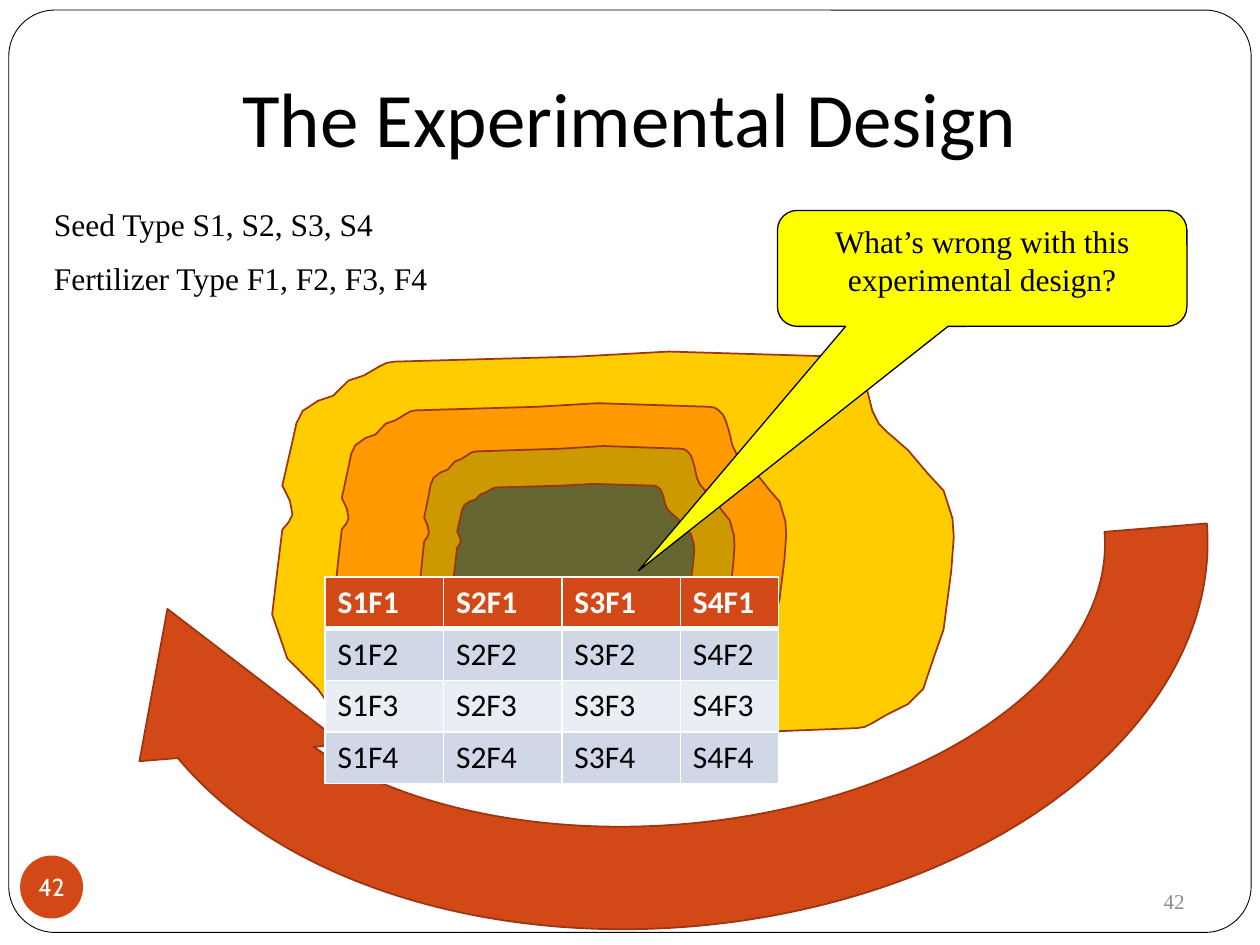
from pptx import Presentation, util as u
from pptx.dml.color import RGBColor
from pptx.enum import shapes, text
from pptx.oxml import parse_xml
from pptx.oxml.ns import nsdecls

BLACK = RGBColor(0x00, 0x00, 0x00)
WHITE = RGBColor(0xFF, 0xFF, 0xFF)
GRAY = RGBColor(0x8C, 0x8C, 0x8C)
RUST = RGBColor(0xD3, 0x48, 0x17)
DARK_RUST = RGBColor(0x9C, 0x35, 0x11)
YELLOW = RGBColor(0xFF, 0xFF, 0x00)
GOLD = RGBColor(0xFF, 0xCC, 0x00)
ORANGE = RGBColor(0xFF, 0x99, 0x00)
OCHRE = RGBColor(0xCC, 0x99, 0x00)
OLIVE = RGBColor(0x66, 0x66, 0x33)
BAND_DARK = RGBColor(0xD0, 0xD8, 0xE8)
BAND_LIGHT = RGBColor(0xE9, 0xED, 0xF4)

COLUMNS, ROWS = 10, 7.5
SERIF, SANS = "Times New Roman", "Calibri"
SHAPE = shapes.MSO_SHAPE
ALIGN = text.PP_ALIGN
MIDDLE = text.MSO_ANCHOR.MIDDLE

FIELD_OUTLINE = [
    (3.88, 6.2), (3.36, 6.17), (3.24, 6.13), (3.04, 5.97), (2.92, 5.89),
    (2.68, 5.69), (2.52, 5.46), (2.28, 5.22), (2.16, 4.87), (2.2, 4.53),
    (2.24, 4.2), (2.29, 4.14), (2.32, 4.08), (2.3, 3.97), (2.24, 3.85),
    (2.32, 3.5), (2.35, 3.36), (2.4, 3.26), (2.52, 3.18), (2.64, 3.14),
    (2.76, 3.02), (2.88, 2.98), (3, 2.91), (3.06, 2.88), (3.12, 2.87),
    (3.84, 2.85), (4.56, 2.83), (5.28, 2.79), (6.6, 2.83), (6.67, 2.84),
    (6.72, 2.87), (6.77, 2.92), (6.8, 2.98), (6.84, 3.1), (6.88, 3.26),
    (6.93, 3.36), (7, 3.43), (7.16, 3.57), (7.32, 3.76), (7.44, 3.89),
    (7.51, 4.11), (7.52, 4.26), (7.5, 4.53), (7.44, 4.99), (7.36, 5.22),
    (7.28, 5.46), (7.16, 5.58), (7, 5.66), (6.88, 5.73), (6.82, 5.76),
    (6.76, 5.77), (6, 5.8), (5.24, 5.81), (5.08, 5.85), (5.02, 5.91),
    (4.96, 5.97), (4.68, 6.01), (4.45, 6.12), (4.32, 6.17),
]


def across(columns):
    return u.Inches(columns)


def place(left, top, width, height):
    return [across(length) for length in (left, top, width, height)]


def paint(item, fill, line=None, weight=1):
    item.shadow.inherit = False
    item.fill.solid()
    item.fill.fore_color.rgb = fill
    if line is None:
        item.line.fill.background()
    else:
        item.line.color.rgb = line
        item.line.width = u.Pt(weight)


def style(paragraph, size, font, color, align=ALIGN.LEFT, bold=False):
    paragraph.alignment = align
    paragraph.font.size = u.Pt(size)
    paragraph.font.name = font
    paragraph.font.color.rgb = color
    paragraph.font.bold = bold


def add_figure(slide, kind, box, fill, line=None, weight=1, adjustments=()):
    figure = slide.shapes.add_shape(kind, *place(*box))
    paint(figure, fill, line, weight)
    for index, value in enumerate(adjustments):
        figure.adjustments[index] = value
    return figure


def add_contour(slide, box, fill):
    left, top, width, height = box
    xs, ys = zip(*FIELD_OUTLINE)
    x_scale = width / (max(xs) - min(xs))
    y_scale = height / (max(ys) - min(ys))
    points = [(across(left + (x - min(xs)) * x_scale),
               across(top + (y - min(ys)) * y_scale)) for x, y in FIELD_OUTLINE]
    builder = slide.shapes.build_freeform(*points[0])
    builder.add_line_segments(points[1:], close=True)
    paint(builder.convert_to_shape(), fill, DARK_RUST)


def add_lines(slide, box, lines, size, color, align=ALIGN.LEFT, space=0):
    frame = slide.shapes.add_textbox(*place(*box)).text_frame
    frame.word_wrap = True
    frame.text = "\n".join(lines)
    for paragraph in frame.paragraphs:
        style(paragraph, size, SERIF, color, align)
        paragraph.space_before = u.Pt(space)
    return frame


def add_borders(cell, **weights):
    properties = cell._tc.get_or_add_tcPr()
    for index, side in enumerate(("L", "R", "T", "B")):
        width = u.Pt(weights.get(side, 1))
        properties.insert(index, parse_xml(
            f'<a:ln{side} {nsdecls("a")} w="{width}"><a:solidFill>'
            f'<a:srgbClr val="{WHITE}"/></a:solidFill></a:ln{side}>'))


def add_plots(slide, left, top, widths, row_height, count):
    box = place(left, top, sum(widths), row_height * count)
    plots = slide.shapes.add_table(count, len(widths), *box).table
    for column, width in zip(plots.columns, widths):
        column.width = across(width)
    for fertilizer in range(count):
        plots.rows[fertilizer].height = across(row_height)
        header = fertilizer == 0
        fill = RUST if header else (BAND_LIGHT, BAND_DARK)[fertilizer % 2]
        weights = {0: {"B": 3}, 1: {"T": 3}}.get(fertilizer, {})
        for seed in range(len(widths)):
            cell = plots.cell(fertilizer, seed)
            cell.text = f"S{seed + 1}F{fertilizer + 1}"
            cell.fill.solid()
            cell.fill.fore_color.rgb = fill
            style(cell.text_frame.paragraphs[0], 18, SANS,
                  WHITE if header else BLACK, bold=header)
            add_borders(cell, **weights)


def add_title(slide, wording):
    title = slide.shapes.title
    title.left, title.top, title.width, title.height = place(0.5, 0.3, 9, 1.25)
    title.text_frame.text = wording
    title.text_frame.vertical_anchor = MIDDLE
    style(title.text_frame.paragraphs[0], 44, SANS, BLACK, ALIGN.CENTER)


def add_callout(slide, wording):
    callout = add_figure(slide, SHAPE.ROUNDED_RECTANGULAR_CALLOUT,
                         (6.17, 1.67, 3.25, 0.92), YELLOW, BLACK, 0.75,
                         (-0.84, 2.61, 0.17))
    callout.text_frame.text = wording
    callout.text_frame.vertical_anchor = text.MSO_ANCHOR.TOP
    style(callout.text_frame.paragraphs[0], 18, SERIF, BLACK, ALIGN.CENTER)


def add_badge(slide, number):
    badge = add_figure(slide, SHAPE.OVAL, (0.16, 6.79, 0.5, 0.5), RUST)
    frame = badge.text_frame
    frame.margin_left = frame.margin_right = 0
    frame.margin_top = frame.margin_bottom = 0
    frame.word_wrap = False
    frame.vertical_anchor = MIDDLE
    frame.text = number
    style(frame.paragraphs[0], 14, "Cabin", WHITE, ALIGN.CENTER)


def main():
    deck = Presentation()
    deck.slide_width, deck.slide_height = across(COLUMNS), across(ROWS)
    slide = deck.slides.add_slide(deck.slide_layouts[5])

    border = add_figure(slide, SHAPE.ROUNDED_RECTANGLE,
                        (0.07, 0.08, 9.86, 7.32), WHITE, BLACK, 0.5, (0.05,))
    slide.shapes._spTree.insert(2, border._element)
    page = add_lines(slide, (7.17, 6.95, 2.33, 0.4), ["42"], 12, GRAY, ALIGN.RIGHT)
    page.vertical_anchor = MIDDLE
    add_title(slide, "The Experimental Design")

    add_contour(slide, (2.16, 2.79, 5.41, 3.42), GOLD)
    sweep = add_figure(slide, SHAPE.CIRCULAR_ARROW, (0.5, 1.25, 9.5, 6.52),
                       RUST, DARK_RUST)
    sweep.rotation = 175.3
    for box, fill in (((2.66, 3.2, 3.58, 2.42), ORANGE),
                      ((3.33, 3.54, 2.5, 1.83), OCHRE),
                      ((3.6, 3.84, 1.91, 1.22), OLIVE)):
        add_contour(slide, box, fill)

    add_plots(slide, 2.58, 4.58, (0.94, 0.94, 0.94, 0.78), 0.41, 4)
    add_callout(slide, "What’s wrong with this experimental design?")
    add_lines(slide, (0.33, 1.58, 4.17, 0.85),
              ["Seed Type S1, S2, S3, S4", "Fertilizer Type F1, F2, F3, F4"],
              18, BLACK, space=9)
    add_badge(slide, "42")
    deck.save("out.pptx")


if __name__ == "__main__":
    main()
